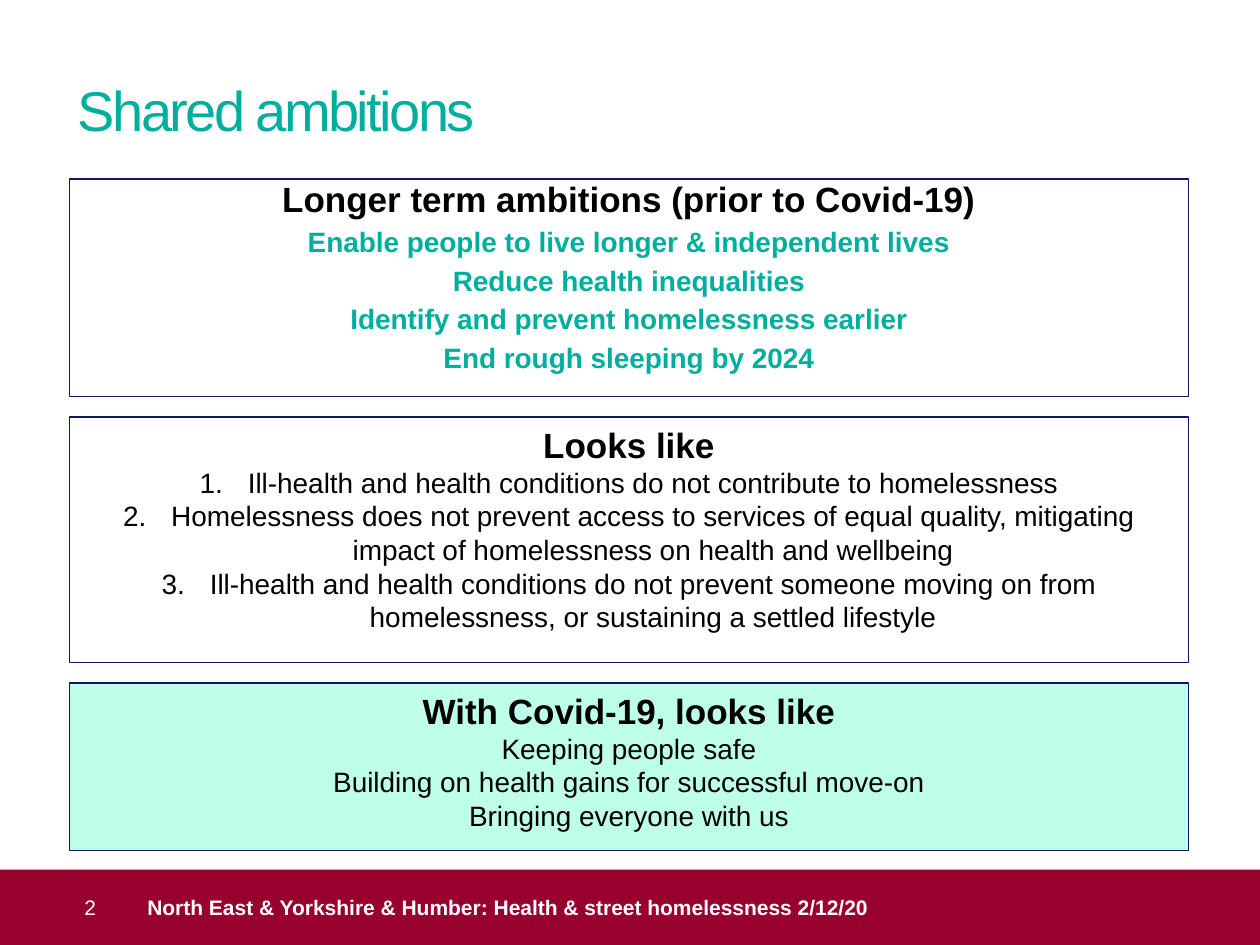
import pptx
import pptx.util
import pptx.dml.color
import pptx.enum.shapes
import pptx.enum.text
import pptx.oxml
import pptx.oxml.ns

Cm = pptx.util.Cm
Pt = pptx.util.Pt
ALIGN = pptx.enum.text.PP_ALIGN
ANCHOR = pptx.enum.text.MSO_ANCHOR
RECT = pptx.enum.shapes.MSO_SHAPE.RECTANGLE
COLORS = {"teal": "00AE9E", "crimson": "98002E", "mint": "BDFFE8",
          "navy": "11175E", "black": "000000", "white": "FFFFFF"}


def rgb(name):
    return pptx.dml.color.RGBColor.from_string(COLORS[name])


def add_text(p, text, size, color, bold=False):
    r = p.add_run()
    r.text = text
    r.font.name = "Arial"
    r.font.size = Pt(size)
    r.font.bold = bold
    r.font.color.rgb = rgb(color)
    return r


prs = pptx.Presentation()
prs.slide_width = Cm(25.4)
prs.slide_height = Cm(19.05)
s = prs.slides.add_slide(prs.slide_layouts[5])

title = s.shapes.title
title.left, title.top, title.width, title.height = Cm(1.57), Cm(1.52), Cm(22.3), Cm(1.8)
tf = title.text_frame
tf.margin_left = tf.margin_right = tf.margin_top = tf.margin_bottom = 0
tf.vertical_anchor = ANCHOR.TOP
p = tf.paragraphs[0]
p.alignment = ALIGN.LEFT
r = add_text(p, "Shared ambitions", 32, "teal")
r.font._element.set("spc", "-150")

footer_top, footer_height = Cm(17.53), Cm(1.52)
band = s.shapes.add_shape(RECT, 0, footer_top, prs.slide_width, footer_height)
band.shadow.inherit = False
band.fill.solid()
band.fill.fore_color.rgb = rgb("crimson")
band.line.fill.background()
caption = s.shapes.add_textbox(Cm(2.49), footer_top, Cm(22.4), footer_height)
footers = [
    (band, "2", 1.7, False),
    (caption, "North East & Yorkshire & Humber: Health & street homelessness 2/12/20", 0.48, True),
]
for sp, text, indent, bold in footers:
    tf = sp.text_frame
    tf.word_wrap = True
    tf.vertical_anchor = ANCHOR.MIDDLE
    tf.margin_left = tf.margin_right = tf.margin_top = tf.margin_bottom = 0
    p = tf.paragraphs[0]
    p.alignment = ALIGN.LEFT
    p._p.get_or_add_pPr().set("marL", str(Cm(indent)))
    add_text(p, text, 12, "white", bold)

panels = [
    {"top": 3.61, "height": 4.39, "fill": None, "color": "teal", "bold": True,
     "spaced": True, "numbered": False,
     "heading": "Longer term ambitions (prior to Covid-19)",
     "items": ["Enable people to live longer & independent lives",
               "Reduce health inequalities",
               "Identify and prevent homelessness earlier",
               "End rough sleeping by 2024"]},
    {"top": 8.41, "height": 4.95, "fill": None, "color": "black", "bold": False,
     "spaced": False, "numbered": True,
     "heading": "Looks like",
     "items": ["Ill-health and health conditions do not contribute to homelessness",
               "Homelessness does not prevent access to services of equal quality, "
               "mitigating impact of homelessness on health and wellbeing",
               "Ill-health and health conditions do not prevent someone moving on from "
               "homelessness, or sustaining a settled lifestyle"]},
    {"top": 13.77, "height": 3.38, "fill": "mint", "color": "black", "bold": False,
     "spaced": False, "numbered": False,
     "heading": "With Covid-19, looks like",
     "items": ["Keeping people safe",
               "Building on health gains for successful move-on",
               "Bringing everyone with us"]},
]
for panel in panels:
    sp = s.shapes.add_shape(RECT, Cm(1.4), Cm(panel["top"]), Cm(22.56), Cm(panel["height"]))
    sp.shadow.inherit = False
    if panel["fill"]:
        sp.fill.solid()
        sp.fill.fore_color.rgb = rgb(panel["fill"])
    else:
        sp.fill.background()
    sp.line.color.rgb = rgb("navy")
    sp.line.width = Pt(0.75)
    tf = sp.text_frame
    tf.word_wrap = True
    tf.vertical_anchor = ANCHOR.TOP
    for i, text in enumerate([panel["heading"]] + panel["items"]):
        p = tf.paragraphs[0] if i == 0 else tf.add_paragraph()
        p.alignment = ALIGN.CENTER
        if panel["spaced"]:
            p.line_spacing = 0.8
            p.space_after = Pt(6.8)
        if i == 0:
            add_text(p, text, 20, "black", True)
            continue
        if panel["numbered"]:
            pPr = p._p.get_or_add_pPr()
            pPr.set("marL", str(Cm(0.97)))
            pPr.set("indent", str(-Cm(0.97)))
            bullet = pptx.oxml.parse_xml(
                f'<a:buAutoNum {pptx.oxml.ns.nsdecls("a")} type="arabicPeriod"/>')
            pPr.append(bullet)
        add_text(p, text, 16, panel["color"], panel["bold"])

prs.save("out.pptx")
